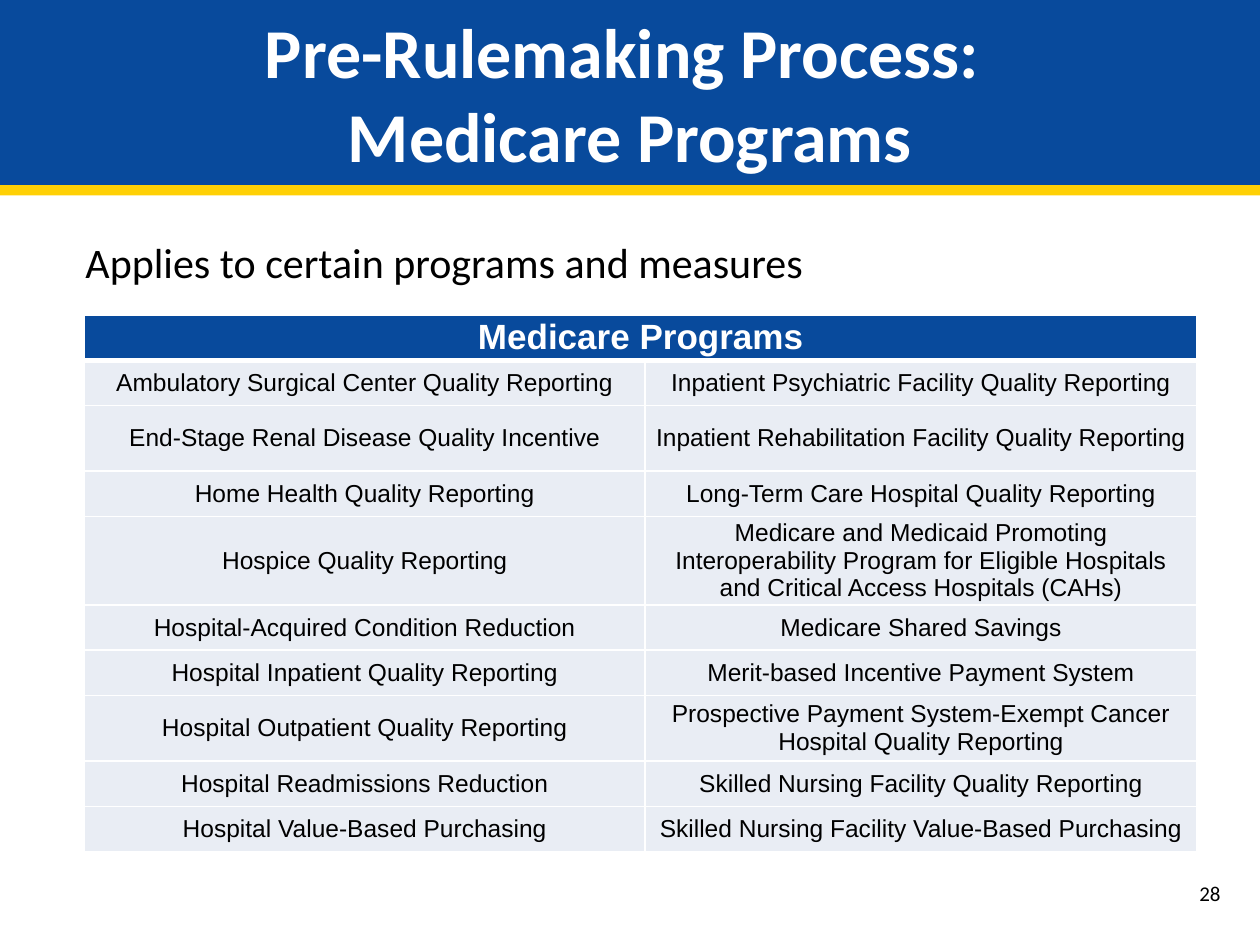
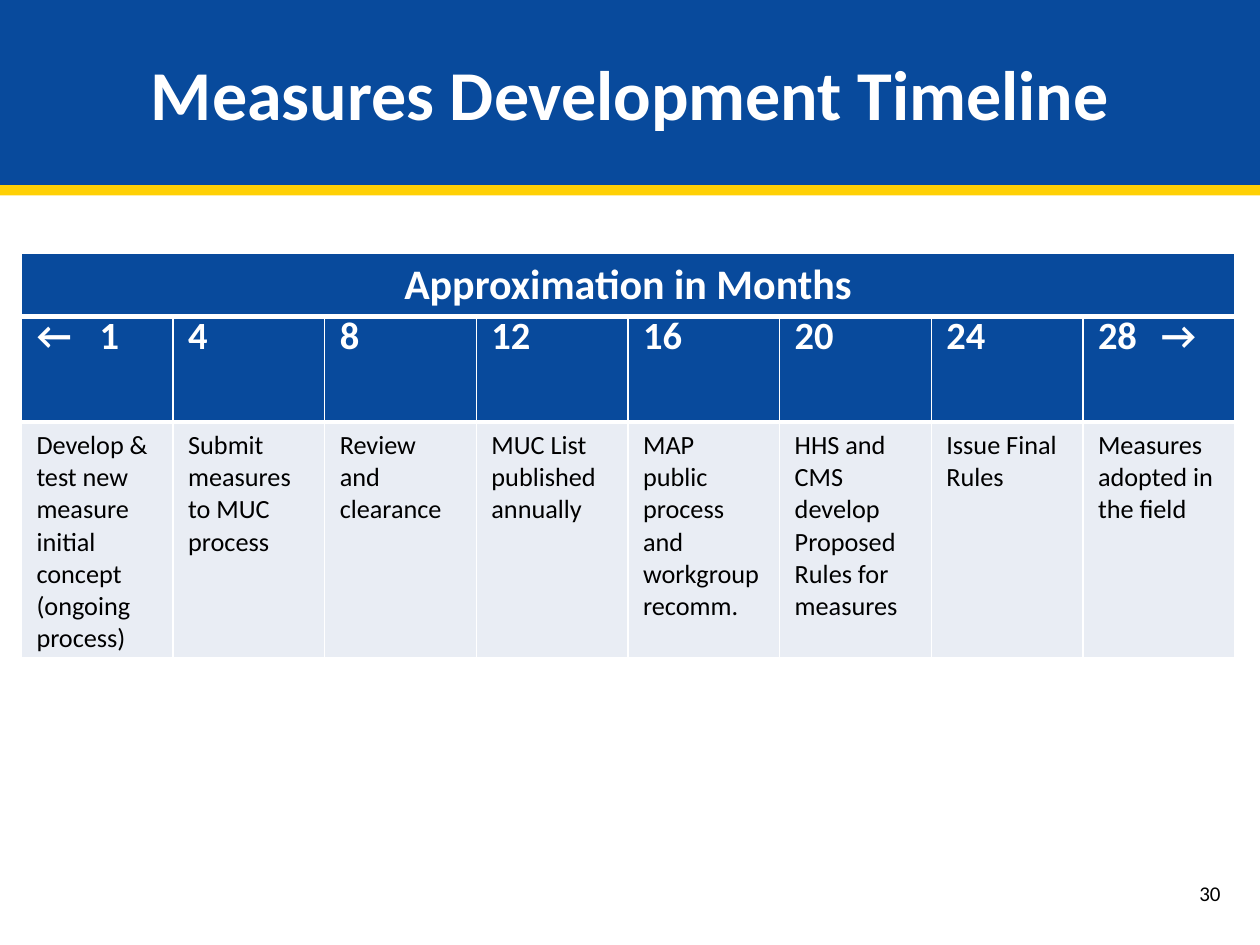
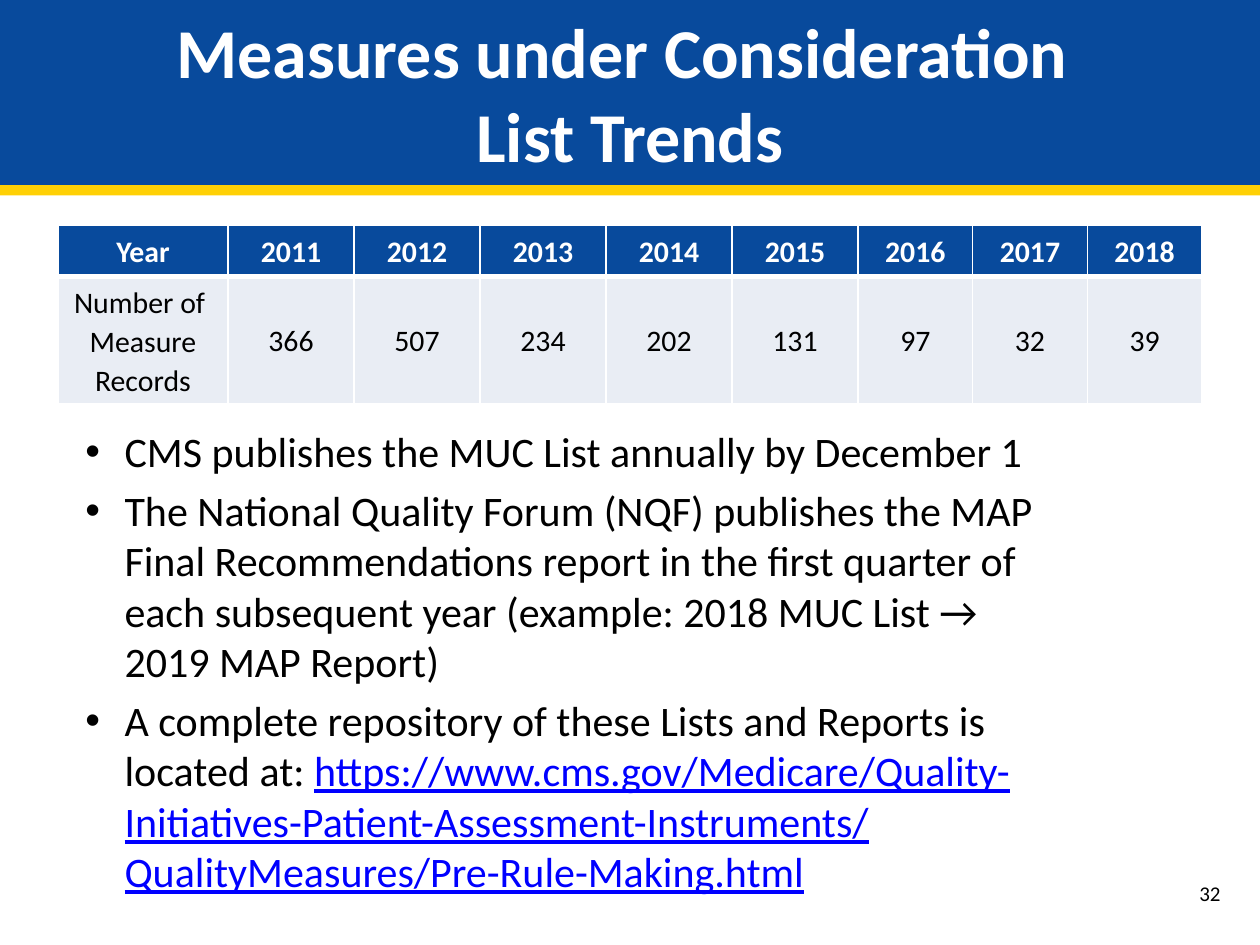
import copy

import pptx
import pptx.dml.color
import pptx.enum.shapes
import pptx.enum.text
import pptx.oxml
import pptx.oxml.ns
import pptx.util

Inches, Pt = pptx.util.Inches, pptx.util.Pt
ALIGN = pptx.enum.text.PP_ALIGN
ANCHOR = pptx.enum.text.MSO_ANCHOR

COLORS = {"blue": "084A9C", "gold": "FFD004", "white": "FFFFFF",
          "pale": "E9EDF4", "black": "000000", "link": "0000FF"}
TITLE_FONT = {"name": "Calibri", "size": Pt(40), "bold": True, "color": "white"}
BODY_FONT = {"name": "Calibri", "size": Pt(24), "bold": False, "color": "black"}
PAGE_FONT = {**BODY_FONT, "size": Pt(12)}
LINK_FONT = {**BODY_FONT, "color": "link", "underline": True}
BAND_HEIGHT, STRIPE_HEIGHT = 1.47, 0.08

PROGRAMS_TITLE = "Pre-Rulemaking Process: \vMedicare Programs"
PROGRAMS_INTRO = "Applies to certain programs and measures"
PROGRAMS = [
    ("Medicare Programs", ""),
    ("Ambulatory Surgical Center Quality Reporting",
     "Inpatient Psychiatric Facility Quality Reporting"),
    ("End-Stage Renal Disease Quality Incentive",
     "Inpatient Rehabilitation Facility Quality Reporting"),
    ("Home Health Quality Reporting", "Long-Term Care Hospital Quality Reporting"),
    ("Hospice Quality Reporting",
     "Medicare and Medicaid Promoting Interoperability Program for Eligible "
     "Hospitals and Critical Access Hospitals (CAHs)"),
    ("Hospital-Acquired Condition Reduction", "Medicare Shared Savings"),
    ("Hospital Inpatient Quality Reporting", "Merit-based Incentive Payment System"),
    ("Hospital Outpatient Quality Reporting",
     "Prospective Payment System-Exempt Cancer Hospital Quality Reporting"),
    ("Hospital Readmissions Reduction", "Skilled Nursing Facility Quality Reporting"),
    ("Hospital Value-Based Purchasing",
     "Skilled Nursing Facility Value-Based Purchasing"),
]
TALL_PROGRAM_ROWS = (2, 4, 7)

TIMELINE_TITLE = "Measures Development Timeline"
TIMELINE_HEADING = "Approximation in Months"
TIMELINE = [
    ("←\t1", "Develop & test new measure initial concept (ongoing process)"),
    ("4", "Submit measures to MUC process"),
    ("8", "Review and clearance"),
    ("12", "MUC List published annually"),
    ("16", "MAP public process and workgroup recomm."),
    ("20", "HHS and CMS develop Proposed Rules for measures"),
    ("24", "Issue Final Rules"),
    ("28\t→", "Measures adopted in the field"),
]

TRENDS_TITLE = "Measures under Consideration \vList Trends"
RECORDS = [
    ("Year", "Number of \vMeasure Records"), ("2011", "366"), ("2012", "507"),
    ("2013", "234"), ("2014", "202"), ("2015", "131"), ("2016", "97"),
    ("2017", "32"), ("2018", "39"),
]
TREND_POINTS = [
    [("CMS publishes the MUC List annually by December 1", BODY_FONT)],
    [("The National Quality Forum (NQF) publishes the MAP Final Recommendations "
      "report in the first quarter of each subsequent year (example: 2018 MUC "
      "List → 2019 MAP Report)", BODY_FONT)],
    [("A complete repository of these Lists and Reports is located at: ", BODY_FONT),
     ("https://www.cms.gov/Medicare/Quality-Initiatives-Patient-Assessment-"
      "Instruments/QualityMeasures/Pre-Rule-Making.html", LINK_FONT)],
]


def rgb(color):
    return pptx.dml.color.RGBColor.from_string(COLORS[color])


def fill(target, color):
    target.fill.solid()
    target.fill.fore_color.rgb = rgb(color)


def style(run, font):
    for attribute, value in font.items():
        if attribute == "color":
            run.font.color.rgb = rgb(value)
        else:
            setattr(run.font, attribute, value)


def add_xml(parent, xml):
    space = pptx.oxml.ns.nsdecls("a")
    parent.append(pptx.oxml.parse_xml(xml.replace(">", f" {space}>", 1)))


def write(frame, text, font, align=ALIGN.LEFT, line_spacing=None):
    frame.text = text
    paragraph = frame.paragraphs[0]
    paragraph.alignment = align
    paragraph.line_spacing = line_spacing
    for run in paragraph.runs:
        style(run, font)
    # Line breaks take the size of the text around them.
    for line_break in paragraph._p.findall(pptx.oxml.ns.qn("a:br")):
        line_break.append(copy.deepcopy(paragraph.runs[0].font._rPr))
    if "\t" in text:
        add_xml(paragraph._p.get_or_add_pPr(),
                f'<a:tabLst><a:tab pos="{Inches(0.5)}" algn="l"/></a:tabLst>')


def add_slide(deck, title, page):
    """Add a slide with the title band, its gold stripe and the page number."""
    slide = deck.slides.add_slide(deck.slide_layouts[5])
    band = slide.shapes.title
    place = {"left": 0, "top": 0, "width": deck.slide_width,
             "height": Inches(BAND_HEIGHT)}
    for attribute, value in place.items():
        setattr(band, attribute, value)
    fill(band, "blue")
    band.text_frame.vertical_anchor = ANCHOR.MIDDLE
    band.text_frame.auto_size = pptx.enum.text.MSO_AUTO_SIZE.NONE
    write(band.text_frame, title, TITLE_FONT, ALIGN.CENTER)

    stripe = slide.shapes.add_shape(
        pptx.enum.shapes.MSO_SHAPE.RECTANGLE, 0, Inches(BAND_HEIGHT),
        deck.slide_width, Inches(STRIPE_HEIGHT))
    fill(stripe, "gold")
    stripe.line.fill.background()
    stripe.shadow.inherit = False

    number = slide.shapes.add_textbox(
        Inches(9.42), Inches(6.94), Inches(0.5), Inches(0.3))
    write(number.text_frame, page, PAGE_FONT)
    return slide


def add_body(slide, top, height, points, bulleted):
    body = slide.shapes.add_textbox(
        Inches(0.58), Inches(top), Inches(7.92), Inches(height)).text_frame
    body.word_wrap = True
    for index, point in enumerate(points):
        paragraph = body.add_paragraph() if index else body.paragraphs[0]
        paragraph.space_before = Pt(4.8)
        for text, font in point:
            run = paragraph.add_run()
            run.text = text
            style(run, font)
        if bulleted:
            properties = paragraph._p.get_or_add_pPr()
            properties.set("marL", str(Inches(0.31)))
            properties.set("indent", str(-Inches(0.31)))
            add_xml(properties, '<a:buFont typeface="Arial"></a:buFont>')
            add_xml(properties, '<a:buChar char="•"></a:buChar>')


def add_borders(cell, bottom):
    for side, points in {"L": 1, "R": 1, "T": 1, "B": bottom}.items():
        add_xml(cell._tc.get_or_add_tcPr(),
                f'<a:ln{side} w="{Pt(points)}"><a:solidFill><a:srgbClr '
                f'val="{COLORS["white"]}"/></a:solidFill></a:ln{side}>')


def add_table(slide, left, top, widths, heights, rows, fonts, margins,
              align=ALIGN.CENTER, anchor=ANCHOR.MIDDLE, line_spacing=None):
    """Add a table with a blue first row; fonts is (header, body)."""
    table = slide.shapes.add_table(
        len(rows), len(widths), Inches(left), Inches(top),
        Inches(sum(widths)), Inches(sum(heights))).table
    for column, width in zip(table.columns, widths):
        column.width = Inches(width)
    for row, height in zip(table.rows, heights):
        row.height = Inches(height)
    side, edge = (Inches(margin) for margin in margins)
    layout = {"margin_left": side, "margin_right": side, "margin_top": edge,
              "margin_bottom": edge, "vertical_anchor": anchor}
    for r, texts in enumerate(rows):
        for c, text in enumerate(texts):
            cell = table.cell(r, c)
            for attribute, value in layout.items():
                setattr(cell, attribute, value)
            add_borders(cell, bottom=1 if r else 3)
            fill(cell, "pale" if r else "blue")
            write(cell.text_frame, text, fonts[min(r, 1)], align, line_spacing)
    return table


def table_fonts(name, header_size, body_size):
    return ({"name": name, "size": Pt(header_size), "bold": True, "color": "white"},
            {"name": name, "size": Pt(body_size), "bold": False, "color": "black"})


def build_programs(deck):
    slide = add_slide(deck, PROGRAMS_TITLE, "28")
    add_body(slide, 1.83, 0.6, [[(PROGRAMS_INTRO, BODY_FONT)]], bulleted=False)
    heights = [0.52 if row in TALL_PROGRAM_ROWS else 0.36
               for row in range(len(PROGRAMS))]
    programs = add_table(slide, 0.67, 2.5, [4.45, 4.38], heights, PROGRAMS,
                         table_fonts("Arial", 20, 14), (0.07, 0))
    programs.cell(0, 0).merge(programs.cell(0, 1))


def build_timeline(deck):
    slide = add_slide(deck, TIMELINE_TITLE, "30")
    width = 9.63
    add_table(slide, 0.17, 2.42, [width / len(TIMELINE)] * len(TIMELINE),
              [0.93, 1.82], list(zip(*TIMELINE)), table_fonts("Calibri", 22, 15),
              (0.12, 0.06), ALIGN.LEFT, ANCHOR.TOP)
    add_table(slide, 0.17, 2.01, [width], [0.5], [(TIMELINE_HEADING,)],
              table_fonts("Calibri", 24, 24), (0.1, 0.05), anchor=ANCHOR.TOP)


def build_trends(deck):
    slide = add_slide(deck, TRENDS_TITLE, "32")
    add_body(slide, 3.33, 4.1, TREND_POINTS, bulleted=True)
    add_table(slide, 0.46, 1.79, [1.35] + [1] * 5 + [0.91] * 3, [0.38, 0.96],
              list(zip(*RECORDS)), table_fonts("Calibri", 17, 17), (0.09, 0.05),
              line_spacing=1.07)


def main():
    deck = pptx.Presentation()
    deck.slide_width, deck.slide_height = Inches(10), Inches(7.5)
    for build in (build_programs, build_timeline, build_trends):
        build(deck)
    deck.save("out.pptx")


if __name__ == "__main__":
    main()
